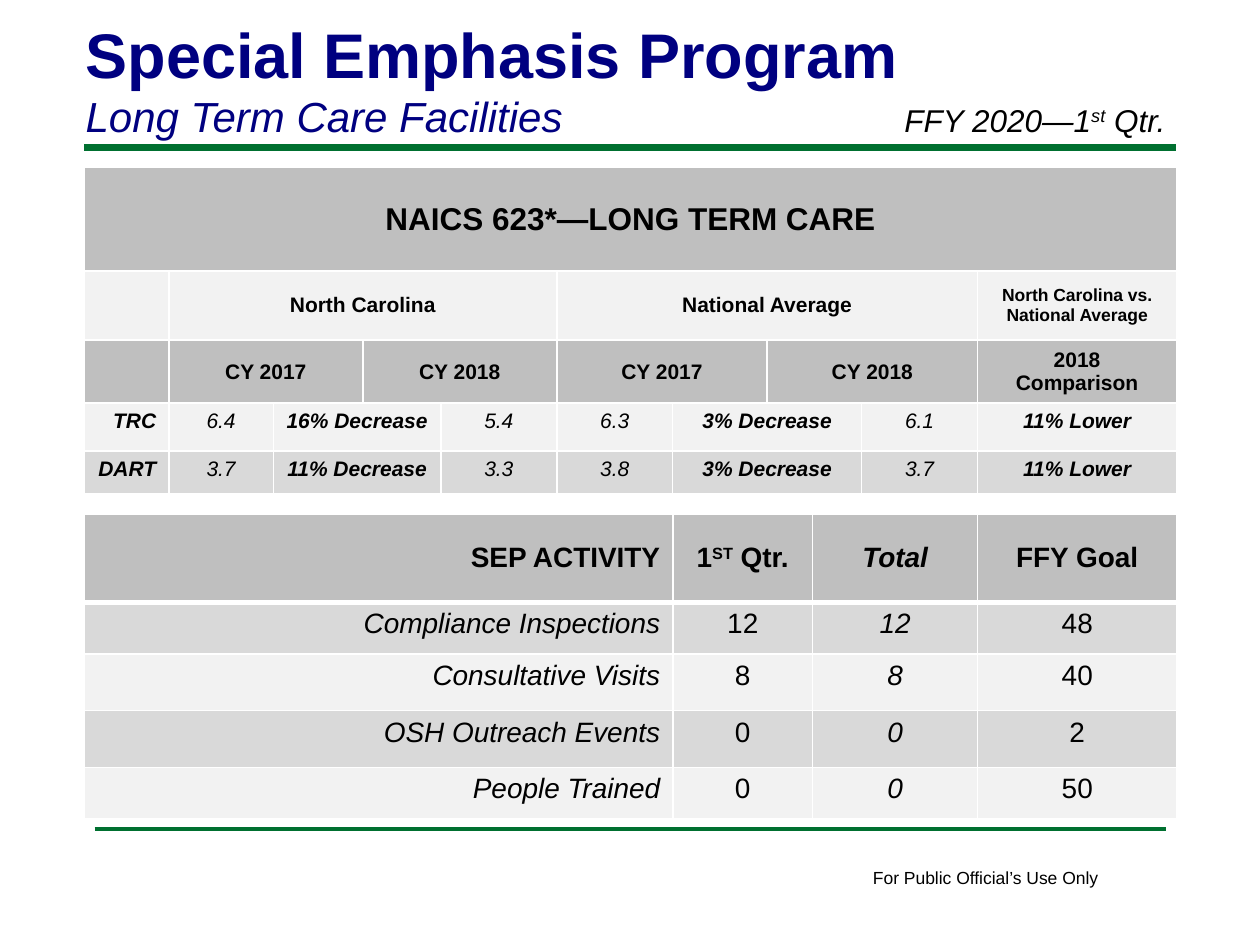
from lxml.etree import SubElement
from pptx import Presentation
from pptx.dml.color import RGBColor
from pptx.enum.shapes import MSO_CONNECTOR as Conn
from pptx.enum.text import MSO_ANCHOR as Anchor, MSO_AUTO_SIZE as Fit, PP_ALIGN as Align
from pptx.oxml.ns import qn
from pptx.util import Inches, Pt

rgb = RGBColor.from_string


def write(para, text, size, color="000000", bold=False, italic=False):
    for i, part in enumerate(text.split("^")):
        run = para.add_run()
        run.text = part
        look = {"name": "Arial", "size": Pt(size), "bold": bold, "italic": italic}
        for key, val in look.items():
            setattr(run.font, key, val)
        run.font.color.rgb = rgb(color)
        if i % 2:
            run.font._element.set("baseline", "30000")


def grid(left, top, cols, highs, rows, fills, heads, style, thick=None):
    frame = slide.shapes.add_table(len(rows), len(cols), Inches(left), Inches(top),
                                   Inches(sum(cols)), Inches(sum(highs)))
    table = frame.table
    for col, wide in zip(table.columns, cols):
        col.width = Inches(wide)
    for row, high in zip(table.rows, highs):
        row.height = Inches(high)
    for r, row in enumerate(rows):
        for c, text in enumerate(row):
            cell = table.cell(r, c)
            props = cell._tc.get_or_add_tcPr()
            for side in "LRTB":
                bold = (side, r) in (("B", thick), ("T", None if thick is None else thick + 1))
                line = SubElement(props, qn("a:ln" + side), w=str(Pt(3 if bold else 1)))
                fill = SubElement(line, qn("a:solidFill"))
                SubElement(fill, qn("a:srgbClr"), val="FFFFFF")
            cell.fill.solid()
            cell.fill.fore_color.rgb = rgb(fills[r])
            if text is None:
                continue
            end = c
            while end + 1 < len(row) and row[end + 1] is None:
                end += 1
            if end > c:
                cell.merge(table.cell(r, end))
            cell.vertical_anchor = Anchor.MIDDLE if r < heads else Anchor.TOP
            para = cell.text_frame.paragraphs[0]
            para.alignment = Align.RIGHT if c == 0 and end == 0 else Align.CENTER
            if text:
                size, bold, italic = style(r, c)
                write(para, text, size, bold=bold, italic=italic)


deck = Presentation()
deck.slide_width, deck.slide_height = Inches(10), Inches(7.5)
slide = deck.slides.add_slide(deck.slide_layouts[5])

for left, right, y, width in [(0.67, 9.33, 1.17, 4), (0.75, 9.25, 6.58, 2)]:
    rule = slide.shapes.add_connector(Conn.STRAIGHT, Inches(left), Inches(y), Inches(right), Inches(y))
    rule.line.color.rgb = rgb("007030")
    rule.line.width = Pt(width)
    SubElement(rule._element.spPr, qn("a:effectLst"))

title = slide.shapes.title
spot = {"left": 0.58, "top": 0.06, "width": 8.25, "height": 1.11}
for key, val in spot.items():
    setattr(title, key, Inches(val))
frame = title.text_frame
frame.auto_size = Fit.NONE
frame.word_wrap = True
frame.vertical_anchor = Anchor.BOTTOM
head, sub = frame.paragraphs[0], frame.add_paragraph()
write(head, "Special Emphasis Program", 36, "000080", bold=True)
write(sub, "Long Term Care Facilities", 24, "000080", italic=True)
for para in (head, sub):
    para.alignment = Align.LEFT

notes = [
    (6.83, 6.83, 2.01, 0.27, "For Public Official’s Use Only", 10, False),
    (7.08, 0.75, 2.5, 0.4, "FFY 2020—1^st^ Qtr.", 18, True),
]
for x, y, wide, high, text, size, italic in notes:
    box = slide.shapes.add_textbox(Inches(x), Inches(y), Inches(wide), Inches(high))
    box.text_frame.word_wrap = italic
    write(box.text_frame.paragraphs[0], text, size, italic=italic)

dark, mid, light = "BFBFBF", "D9D9D9", "F2F2F2"

goals = [
    ["SEP ACTIVITY", "1^ST^ Qtr.", "Total", "FFY Goal"],
    ["Compliance Inspections", "12", "12", "48"],
    ["Consultative Visits", "8", "8", "40"],
    ["OSH Outreach Events", "0", "0", "2"],
    ["People Trained", "0", "0", "50"],
]
grid(0.67, 4.08, [4.67, 1.11, 1.31, 1.58], [0.7, 0.41, 0.45, 0.45, 0.41], goals,
     [dark, mid, light, mid, light], 1,
     lambda r, c: (16, r == 0, c == 2 or (c == 0 and r > 0)), thick=0)

rates = [
    ["NAICS 623*—LONG TERM CARE"] + [None] * 9,
    ["", "North Carolina", None, None, None, "National Average", None, None, None,
     "North Carolina vs. National Average"],
    ["", "CY 2017", None, "CY 2018", None, "CY 2017", None, "CY 2018", None, "2018 Comparison"],
    ["TRC", "6.4", "16% Decrease", None, "5.4", "6.3", "3% Decrease", None, "6.1", "11% Lower"],
    ["DART", "3.7", "11% Decrease", None, "3.3", "3.8", "3% Decrease", None, "3.7", "11% Lower"],
]
sizes = {(0, 0): 18, (1, 9): 10}
grid(0.67, 1.33, [0.67, 0.83, 0.71, 0.62, 0.92, 0.92, 0.75, 0.75, 0.92, 1.58],
     [0.82, 0.55, 0.5, 0.38, 0.34], rates, [dark, light, dark, light, mid], 3,
     lambda r, c: (sizes.get((r, c), 12), r < 3 or c not in (1, 4, 5, 8), r > 2))

deck.save("out.pptx")
